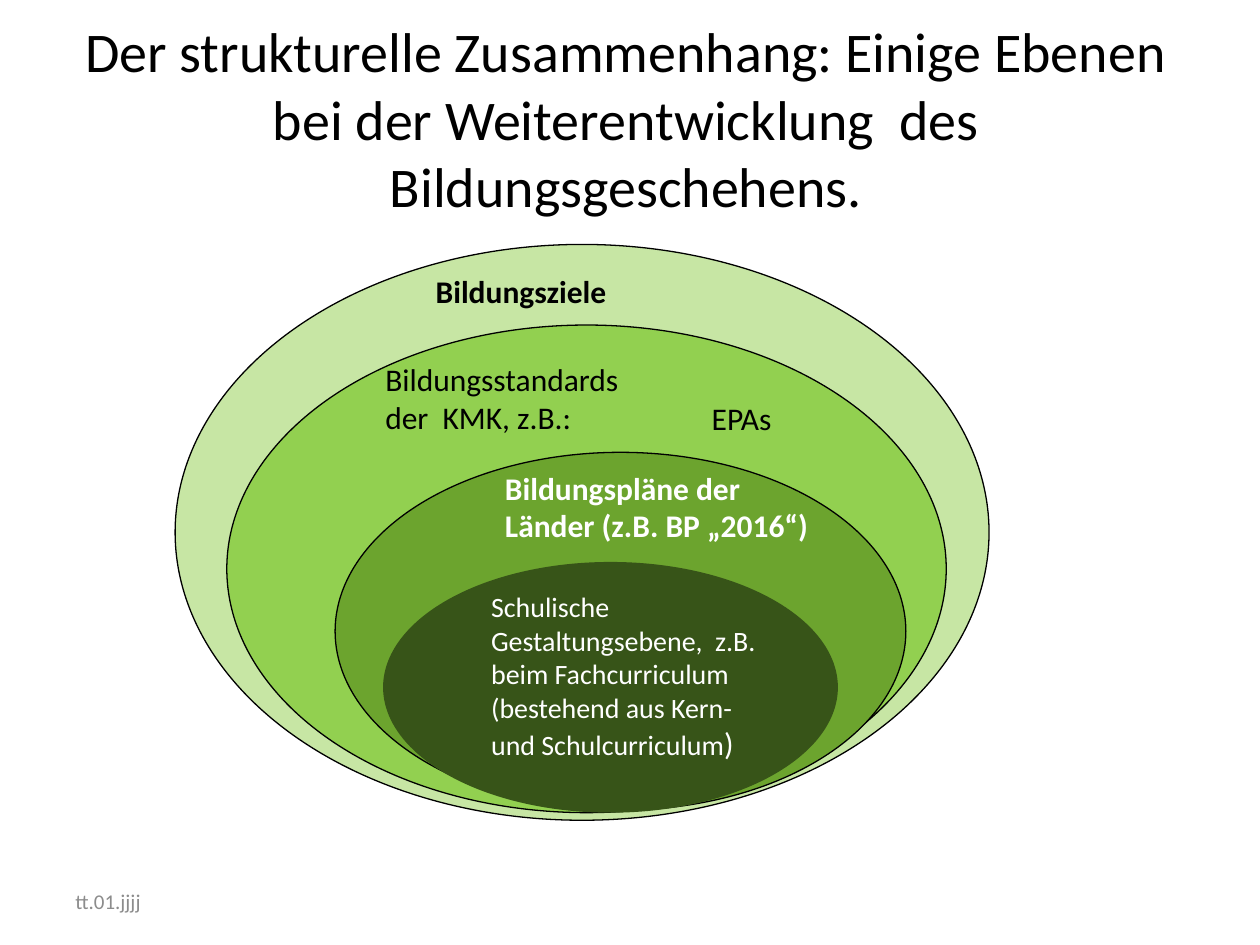
import dataclasses

import pptx
import pptx.dml.color
import pptx.enum.shapes
import pptx.enum.text
import pptx.util

# Grid of square cells covering the slide
COLUMNS, ROWS = 100, 75
FONT = "Calibri"
COLORS = {
    "black": "000000",
    "white": "FFFFFF",
    "gray": "8C8C8C",
    "goals": "C7E6A4",
    "standards": "92D050",
    "plans": "6CA42E",
    "school": "375418",
}

presentation = pptx.Presentation()
presentation.slide_width = pptx.util.Inches(10)
presentation.slide_height = pptx.util.Inches(7.5)
CELL = presentation.slide_width / COLUMNS


@dataclasses.dataclass
class Area:
    column: float
    row: float
    columns: float
    rows: float

    def lengths(self) -> list[int]:
        return [round(cells * CELL) for cells in dataclasses.astuple(self)]


@dataclasses.dataclass
class Level:
    area: Area
    fill: str
    outlined: bool = True


@dataclasses.dataclass
class Label:
    area: Area
    text: str
    size: float = 18
    color: str = "black"
    bold: bool = False
    ending: str = ""
    middle: bool = False


def rgb(name: str) -> pptx.dml.color.RGBColor:
    return pptx.dml.color.RGBColor.from_string(COLORS[name])


def write(paragraph, text: str, *, size: float, color: str = "black", bold: bool = False) -> None:
    run = paragraph.add_run()
    run.text = text
    run.font.name = FONT
    run.font.size = pptx.util.Pt(size)
    run.font.bold = bold
    run.font.color.rgb = rgb(color)


def draw_level(slide, level: Level) -> None:
    shape = slide.shapes.add_shape(pptx.enum.shapes.MSO_SHAPE.OVAL, *level.area.lengths())
    shape.shadow.inherit = False
    shape.fill.solid()
    shape.fill.fore_color.rgb = rgb(level.fill)
    if level.outlined:
        shape.line.color.rgb = rgb("black")
        shape.line.width = pptx.util.Pt(0.75)
    else:
        shape.line.fill.background()


def draw_label(slide, label: Label) -> None:
    frame = slide.shapes.add_textbox(*label.area.lengths()).text_frame
    frame.word_wrap = True
    if label.middle:
        frame.vertical_anchor = pptx.enum.text.MSO_ANCHOR.MIDDLE
    paragraph = frame.paragraphs[0]
    write(paragraph, label.text, size=label.size, color=label.color, bold=label.bold)
    if label.ending:
        write(paragraph, label.ending, size=18, color=label.color)


# Nested levels, from the outermost to the innermost
LEVELS = [
    Level(Area(13.9, 19.4, 64.6, 45.7), "goals"),
    Level(Area(18, 25.8, 57.1, 38.7), "standards"),
    Level(Area(26.6, 35.9, 45.3, 28.4), "plans"),
    Level(Area(30.4, 44.6, 36.1, 19.9), "school", outlined=False),
]

LABELS = [
    Label(Area(5, 69.5, 23.3, 4), "tt.01.jjjj", size=12, color="gray", middle=True),
    Label(Area(33.6, 21.1, 22.7, 4), "Bildungsziele", bold=True),
    Label(Area(29.6, 28.1, 22, 7.1), "Bildungsstandards der  KMK, z.B.:"),
    Label(Area(55.5, 31.2, 7, 4), "EPAs"),
    Label(Area(39.1, 36.7, 27.3, 7.1), "Bildungspläne der Länder (z.B. BP „2016“)",
          color="white", bold=True),
    Label(Area(38, 46.3, 24.4, 15.2),
          "Schulische Gestaltungsebene,  z.B. beim Fachcurriculum "
          "(bestehend aus Kern- und Schulcurriculum",
          size=16, color="white", ending=")"),
]

# Title
slide = presentation.slides.add_slide(presentation.slide_layouts.get_by_name("Title Only"))
title = slide.shapes.title
title.left, title.top, title.width, title.height = Area(4.7, 3.1, 90, 12.5).lengths()
title.text_frame.auto_size = pptx.enum.text.MSO_AUTO_SIZE.NONE
title.text_frame.vertical_anchor = pptx.enum.text.MSO_ANCHOR.MIDDLE
title.text_frame.paragraphs[0].alignment = pptx.enum.text.PP_ALIGN.CENTER
write(
    title.text_frame.paragraphs[0],
    "Der strukturelle Zusammenhang: Einige Ebenen "
    "bei der Weiterentwicklung  des Bildungsgeschehens.",
    size=32,
)

# Diagram
for level in LEVELS:
    draw_level(slide, level)
for label in LABELS:
    draw_label(slide, label)

presentation.save("out.pptx")
